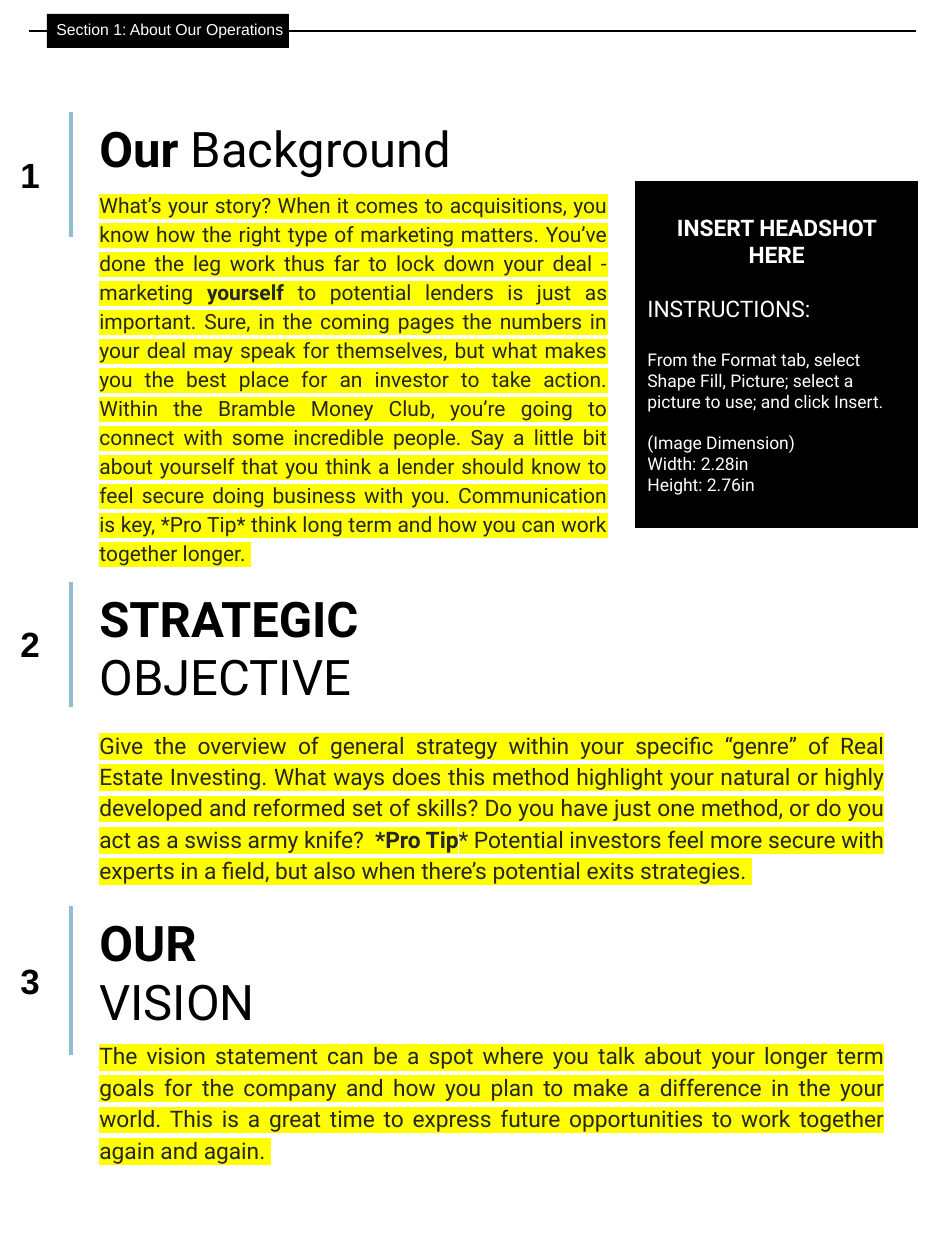
"""Build the "About Our Operations" page with three numbered sections."""
from dataclasses import dataclass
from typing import Optional

from lxml.etree import SubElement
from pptx import Presentation
from pptx.dml.color import RGBColor
from pptx.enum.shapes import MSO_CONNECTOR as Conn, MSO_SHAPE as Shape
from pptx.enum.text import MSO_ANCHOR as Anchor, PP_ALIGN as Align
from pptx.oxml.ns import qn
from pptx.util import Emu, Pt

PX_PER_INCH = 126
BLACK, WHITE, GREY, BLUE, YELLOW = "000000", "FFFFFF", "262626", "92BED4", "FFFF00"


@dataclass(frozen=True)
class Run:
    text: str
    bold: bool = False


@dataclass(frozen=True)
class Style:
    size: int
    color: str = BLACK
    font: str = "Roboto"
    highlight: Optional[str] = None


@dataclass(frozen=True)
class Para:
    runs: tuple[Run, ...]
    style: Style
    align: Align = Align.LEFT
    spacing: float = 1.0
    before: float = 0


@dataclass(frozen=True)
class Box:
    left: int
    top: int
    width: int
    height: int


@dataclass(frozen=True)
class Section:
    number: str
    top: int
    height: int
    title: tuple[tuple[Run, ...], ...]
    body: Box
    body_size: int
    text: tuple[Run, ...]


TITLE = Style(28)
NUMBER = Style(20, font="Arial")
HEADER = Style(9, WHITE, "Arial")
CARD_LARGE = Style(13, WHITE)
CARD_SMALL = Style(10, WHITE)

SECTIONS = (
    Section("1", 112, 125, ((Run("Our ", True), Run("Background")),),
            Box(87, 183, 533, 426), 12, (
        Run("What’s your story? When it comes to acquisitions, you know how the right "
            "type of marketing matters. You’ve done the leg work thus far to lock down "
            "your deal - marketing "),
        Run("yourself", True),
        Run(" to potential lenders is just as important. Sure, in the coming pages the "
            "numbers in your deal may speak for themselves, but what makes you the best "
            "place for an investor to take action. Within the Bramble Money Club, you’re "
            "going to connect with some incredible people. Say a little bit about "
            "yourself that you think a lender should know to feel secure doing business "
            "with you. Communication is key, *Pro Tip* think long term and how you can "
            "work together longer. "))),
    Section("2", 582, 125, ((Run("STRATEGIC", True),), (Run("OBJECTIVE"),)),
            Box(87, 721, 809, 170), 13, (
        Run("Give the overview of general strategy within your specific “genre” of Real "
            "Estate Investing. What ways does this method highlight your natural or "
            "highly developed and reformed set of skills? Do you have just one method, "
            "or do you act as a swiss army knife?  "),
        Run("*Pro Tip", True),
        Run("* Potential investors feel more secure with experts in a field, but also "
            "when there’s potential exits strategies. "))),
    Section("3", 906, 149, ((Run("OUR", True),), (Run("VISION"),)),
            Box(87, 1032, 809, 140), 13, (
        Run("The vision statement can be a spot where you talk about your longer term "
            "goals for the company and how you plan to make a difference in the your "
            "world. This is a great time to express future opportunities to work "
            "together again and again. "),)),
)

CARD = (
    Para((Run("INSERT HEADSHOT HERE", True),), CARD_LARGE, Align.CENTER),
    Para((Run("INSTRUCTIONS:"),), CARD_LARGE, before=15.2),
    Para((Run("From the Format tab, select Shape Fill, Picture; select a picture to "
              "use; and click Insert."),), CARD_SMALL, before=15.2),
    Para((Run("(Image Dimension)"),), CARD_SMALL, before=11.7),
    Para((Run("Width: 2.28in"),), CARD_SMALL),
    Para((Run("Height: 2.76in"),), CARD_SMALL),
)


def px(n: float) -> Emu:
    """Turn pixels into EMU."""
    return Emu(round(n * 914400 / PX_PER_INCH))


def rgb(color: str) -> RGBColor:
    """Turn a hex string into a colour."""
    return RGBColor.from_string(color)


def place(box: Box) -> tuple[Emu, Emu, Emu, Emu]:
    """Return a box's left, top, width and height in EMU."""
    return px(box.left), px(box.top), px(box.width), px(box.height)


def write(sp, paras: tuple[Para, ...], anchor: Anchor = Anchor.TOP) -> None:
    """Write paragraphs into a shape, run by run."""
    tf = sp.text_frame
    tf.word_wrap = True
    tf.vertical_anchor = anchor
    for i, para in enumerate(paras):
        p = tf.add_paragraph() if i else tf.paragraphs[0]
        p.alignment, p.line_spacing = para.align, para.spacing
        p.space_before = Pt(para.before)
        for run in para.runs:
            r = p.add_run()
            r.text = run.text
            r.font.size, r.font.bold = Pt(para.style.size), run.bold
            r.font.color.rgb = rgb(para.style.color)
            if para.style.highlight:
                mark = SubElement(r.font._element, qn("a:highlight"))
                SubElement(mark, qn("a:srgbClr"), val=para.style.highlight)
            r.font.name = para.style.font


def add_text(shapes, box: Box, paras: tuple[Para, ...], anchor: Anchor = Anchor.TOP) -> None:
    """Add a text box."""
    write(shapes.add_textbox(*place(box)), paras, anchor)


def add_line(shapes, x1: int, y1: int, x2: int, y2: int, color: str, width: float) -> None:
    """Add a straight line without a shadow."""
    line = shapes.add_connector(Conn.STRAIGHT, px(x1), px(y1), px(x2), px(y2))
    line.line.color.rgb = rgb(color)
    line.line.width = Pt(width)
    SubElement(line._element.spPr, qn("a:effectLst"))


def add_block(shapes, box: Box):
    """Add a plain black rectangle."""
    sp = shapes.add_shape(Shape.RECTANGLE, *place(box))
    sp.shadow.inherit = False
    sp.fill.solid()
    sp.fill.fore_color.rgb = rgb(BLACK)
    sp.line.fill.background()
    return sp


def add_section(shapes, sec: Section) -> None:
    """Add a numbered section: number, bar, title and body as one group."""
    group = shapes.add_group_shape().shapes
    number_height = round(sec.height * 0.7)
    number_top = sec.top + (sec.height - number_height) // 2
    add_text(group, Box(8, number_top, 48, number_height),
             (Para((Run(sec.number, True),), NUMBER),), Anchor.MIDDLE)
    add_line(group, 71, sec.top, 71, sec.top + sec.height, BLUE, 2.25)
    add_text(group, Box(87, sec.top, 851, sec.height),
             tuple(Para(runs, TITLE) for runs in sec.title))
    body = Style(sec.body_size, GREY, highlight=YELLOW)
    add_text(group, sec.body, (Para(sec.text, body, Align.JUSTIFY, 1.15),))


def main() -> None:
    """Build and save the page."""
    prs = Presentation()
    prs.slide_width, prs.slide_height = px(945), px(1260)
    s = prs.slides.add_slide(prs.slide_layouts[6])
    add_line(s.shapes, 29, 31, 916, 31, BLACK, 0.75)
    add_block(s.shapes, Box(47, 14, 242, 34))
    add_text(s.shapes, Box(44, 16, 284, 40),
             (Para((Run("Section 1: About Our Operations"),), HEADER, spacing=0.9),))
    for sec in SECTIONS:
        add_section(s.shapes, sec)
    write(add_block(s.shapes, Box(635, 181, 283, 347)), CARD, Anchor.MIDDLE)
    prs.save("out.pptx")


if __name__ == "__main__":
    main()
